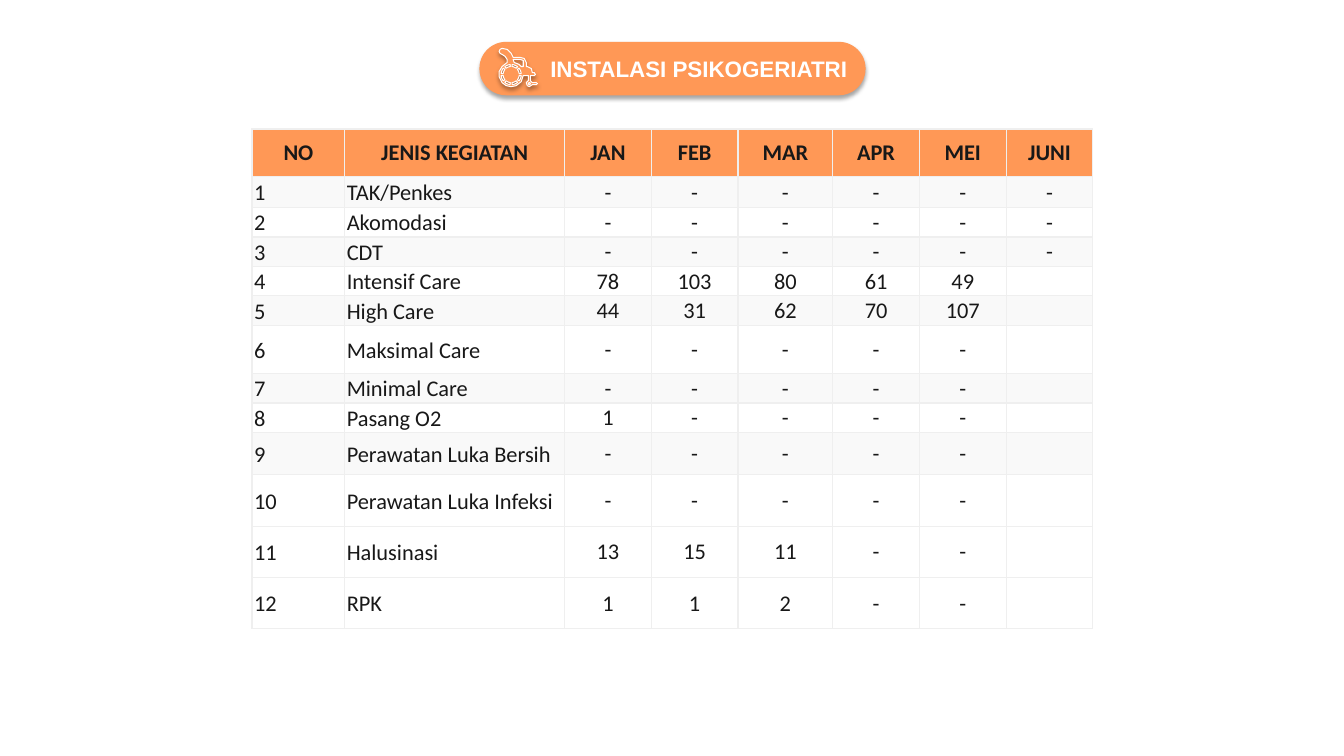
from math import cos, radians, sin

from lxml.etree import SubElement
from pptx import Presentation
from pptx.dml.color import RGBColor
from pptx.enum.shapes import MSO_SHAPE as Shape
from pptx.enum.text import MSO_ANCHOR as Anchor, PP_ALIGN as Align
from pptx.oxml.ns import qn
from pptx.util import Inches, Pt

ORANGE, WHITE, INK, GREY, RULE = "FF9856", "FFFFFF", "181818", "F9F9F9", "EFEFEF"
HEADS = ["NO", "JENIS KEGIATAN", "JAN", "FEB", "MAR", "APR", "MEI", "JUNI"]
ROWS = [
    ("TAK/Penkes", "- - - - - -"),
    ("Akomodasi", "- - - - - -"),
    ("CDT", "- - - - - -"),
    ("Intensif Care", "78 103 80 61 49"),
    ("High Care", "44 31 62 70 107"),
    ("Maksimal Care", "- - - - -"),
    ("Minimal Care", "- - - - -"),
    ("Pasang O2", "1 - - - -"),
    ("Perawatan Luka Bersih", "- - - - -"),
    ("Perawatan Luka Infeksi", "- - - - -"),
    ("Halusinasi", "13 15 11 - -"),
    ("RPK", "1 1 2 - -"),
]
WIDTHS = [0.92, 2.18, 0.86, 0.86, 0.94, 0.86, 0.86, 0.86]
HEIGHTS = [0.47, 0.31, 0.29, 0.29, 0.26, 0.26, 0.48, 0.26, 0.26, 0.42, 0.51, 0.51, 0.51]
CHAIR = [
    (0.03, 0), (0.01, 0.01), (0, 0.03), (0.01, 0.05), (0.03, 0.06), (0.06, 0.08),
    (0.08, 0.11), (0.08, 0.14), (0.03, 0.18), (0, 0.23), (0, 0.28), (0.03, 0.34),
    (0.07, 0.37), (0.12, 0.38), (0.17, 0.37), (0.22, 0.33), (0.24, 0.27), (0.29, 0.27),
    (0.29, 0.32), (0.27, 0.34), (0.28, 0.37), (0.3, 0.38), (0.33, 0.36), (0.37, 0.36),
    (0.38, 0.35), (0.37, 0.34), (0.33, 0.34), (0.31, 0.32), (0.31, 0.27), (0.35, 0.27),
    (0.36, 0.26), (0.35, 0.24), (0.33, 0.24), (0.32, 0.2), (0.28, 0.18), (0.27, 0.18),
    (0.27, 0.14), (0.25, 0.1), (0.21, 0.09), (0.14, 0.09), (0.12, 0.05), (0.08, 0.01),
]
SEAT = [
    (0.21, 0.11), (0.24, 0.12), (0.24, 0.18), (0.22, 0.18), (0.2, 0.16),
    (0.15, 0.14), (0.14, 0.11),
]


def rgb(code):
    """Turn a hex string into a colour."""
    return RGBColor.from_string(code)


def put(item, form):
    """Set each attribute named in a dict."""
    for name, value in form.items():
        setattr(item, name, value)


def write(para, text, face, color, bold, align):
    """Write one 16 point run in a paragraph."""
    para.alignment = align
    if text:
        run = para.add_run()
        put(run, {"text": text})
        put(run.font, {"name": face, "size": Pt(16), "bold": bold})
        run.font.color.rgb = rgb(color)
    else:
        SubElement(para._p, qn("a:endParaRPr"), sz="1600")


def paint(shape, line):
    """Give a shape the orange fill, a thin line and a soft shadow."""
    shape.fill.solid()
    shape.fill.fore_color.rgb = rgb(ORANGE)
    shape.line.color.rgb = rgb(line)
    shape.line.width = Pt(0.75)
    shape.shadow.inherit = False
    glow = SubElement(shape._element.spPr.find(qn("a:effectLst")), qn("a:outerShdw"),
                      blurRad=str(Pt(3.1)), dist=str(Pt(1.8)), dir="5400000",
                      algn="ctr", rotWithShape="0")
    tint = SubElement(glow, qn("a:srgbClr"), val="000000")
    SubElement(tint, qn("a:alpha"), val="35000")


def ring(x, y, near, far, start, end):
    """Return the outline of a ring segment, angles in degrees."""
    turns = [radians(start + (end - start) * i / 8) for i in range(9)]
    outer = [(x + far * cos(a), y + far * sin(a)) for a in turns]
    inner = [(x + near * cos(a), y + near * sin(a)) for a in reversed(turns)]
    return outer + inner


def chair(shapes, left, top):
    """Draw the wheelchair from its top left corner."""
    slots = [ring(0.12, 0.26, 0.08, 0.1, a + 6, a + 39) for a in range(0, 360, 45)]
    hub = ring(0.3, 0.35, 0, 0.01, 0, 360)[:8]
    build = None
    for part in [CHAIR, SEAT, hub] + slots:
        dots = [(Inches(left + x), Inches(top + y)) for x, y in part]
        if build is None:
            build = shapes.build_freeform(*dots[0])
        else:
            build.move_to(*dots[0])
        build.add_line_segments(dots[1:], close=True)
    paint(build.convert_to_shape(), WHITE)


def banner(slide, left, top, width, height):
    """Place the title pill with its wheelchair."""
    group = slide.shapes.add_group_shape()
    pill = group.shapes.add_shape(Shape.ROUNDED_RECTANGLE, Inches(left), Inches(top),
                                  Inches(width), Inches(height))
    pill.adjustments[0] = 0.5
    paint(pill, ORANGE)
    put(pill.text_frame, {"vertical_anchor": Anchor.MIDDLE, "word_wrap": True})
    write(pill.text_frame.paragraphs[0], "INSTALASI PSIKOGERIATRI", "Arial", WHITE,
          True, Align.RIGHT)
    chair(group.shapes, left + 0.19, top + 0.06)


def edge(cell):
    """Draw thin rules on all sides of a cell, ahead of its fill."""
    props = cell._tc.get_or_add_tcPr()
    for side in ("lnL", "lnR", "lnT", "lnB"):
        line = SubElement(props, qn("a:" + side), w=str(Pt(1)))
        fill = SubElement(line, qn("a:solidFill"))
        SubElement(fill, qn("a:srgbClr"), val=RULE)


def dress(cell, text, row, col):
    """Fill, rule and write one cell by its place in the grid."""
    head, label = row == 0, col < 2
    pads = (0.2, 0.08, 0.2, 0.08) if head else (0.02, 0.02, 0.02, 0) if label else (0.01, 0.01, 0.01, 0)
    sides = ("margin_left", "margin_top", "margin_right", "margin_bottom")
    put(cell, {side: Inches(pad) for side, pad in zip(sides, pads)})
    cell.vertical_anchor = Anchor.MIDDLE
    edge(cell)
    cell.fill.solid()
    band = GREY if row % 2 and row < 11 else WHITE
    cell.fill.fore_color.rgb = rgb(ORANGE if head else band)
    align = Align.LEFT if label and not head else Align.CENTER
    write(cell.text_frame.paragraphs[0], text, "Calibri", INK, head, align)


def grid(slide, left, top, width, height):
    """Place the table of monthly activity counts."""
    lines = [HEADS] + [[str(n), name] + counts.split()
                       for n, (name, counts) in enumerate(ROWS, 1)]
    frame = slide.shapes.add_table(len(lines), len(HEADS), Inches(left), Inches(top),
                                   Inches(width), Inches(height))
    table = frame.table
    for col, size in zip(table.columns, WIDTHS):
        col.width = Inches(size)
    for row, size in zip(table.rows, HEIGHTS):
        row.height = Inches(size)
    for r, line in enumerate(lines):
        for c in range(len(HEADS)):
            dress(table.cell(r, c), line[c] if c < len(line) else "", r, c)
    frame.height = Inches(height)


def main():
    """Build and save the slide."""
    deck = Presentation()
    put(deck, {"slide_width": Inches(13.33), "slide_height": Inches(7.5)})
    slide = deck.slides.add_slide(deck.slide_layouts[6])
    grid(slide, 2.5, 1.28, 8.33, 4.93)
    banner(slide, 4.76, 0.42, 3.82, 0.52)
    deck.save("out.pptx")


if __name__ == "__main__":
    main()
